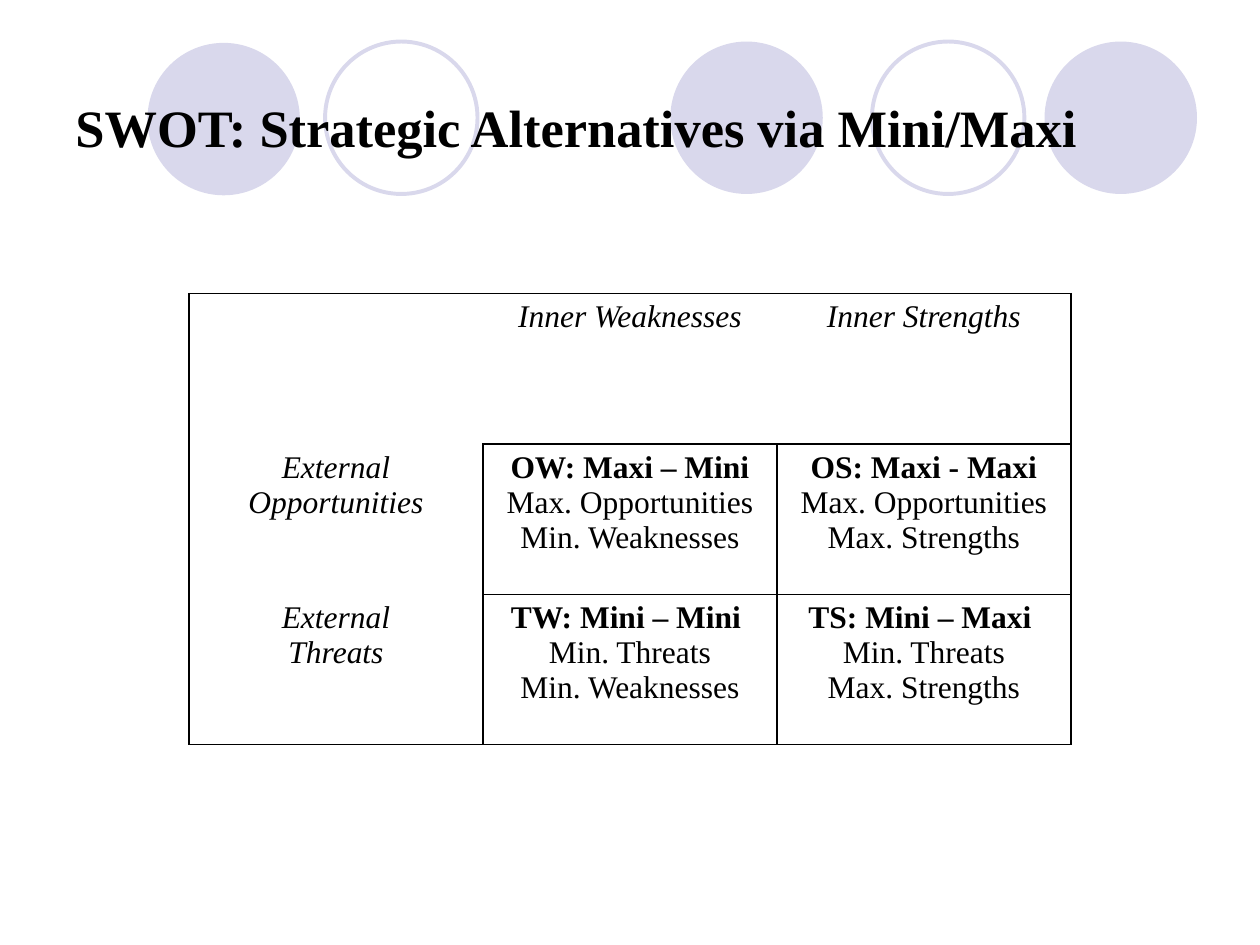
"""Build the SWOT mini/maxi strategy slide."""
from lxml import etree
from pptx import Presentation
from pptx.dml.color import RGBColor
from pptx.enum.shapes import MSO_SHAPE
from pptx.enum.text import MSO_ANCHOR, PP_ALIGN
from pptx.oxml.ns import qn
from pptx.util import Inches, Pt

OVAL = MSO_SHAPE.OVAL
MIDDLE = MSO_ANCHOR.MIDDLE
CENTER = PP_ALIGN.CENTER
BLACK = RGBColor(0, 0, 0)
LAVENDER = RGBColor(0xD9, 0xD8, 0xEC)
FONT = "Times New Roman"

TITLE = "SWOT: Strategic Alternatives via Mini/Maxi"
CIRCLES = [(5.32, 0.33, True), (8.29, 0.33, True), (1.17, 0.34, True),
           (6.92, 0.33, False), (2.58, 0.33, False)]
DIAMETER = 1.21
ROWS = [
    [[], ["Inner Weaknesses"], ["Inner Strengths"]],
    [["External Opportunities"],
     ["OW: Maxi – Mini", "Max. Opportunities", "Min. Weaknesses"],
     ["OS: Maxi - Maxi", "Max. Opportunities", "Max. Strengths"]],
    [["External", "Threats"],
     ["TW: Mini – Mini ", "Min. Threats", "Min. Weaknesses"],
     ["TS: Mini – Maxi ", "Min. Threats", "Max. Strengths"]],
]


def add_run(p, text, size, bold=False, italic=False):
    r = p.add_run()
    r.text = text
    r.font.name = FONT
    r.font.size = Pt(size)
    r.font.bold = bold
    r.font.italic = italic
    r.font.color.rgb = BLACK


def set_borders(cell, sides):
    tc_pr = cell._tc.get_or_add_tcPr()
    for i, side in enumerate("LRTB"):
        ln = etree.Element(qn(f"a:ln{side}"), w=str(Pt(1)))
        if side in sides:
            fill = etree.SubElement(ln, qn("a:solidFill"))
            etree.SubElement(fill, qn("a:srgbClr"), val=str(BLACK))
        else:
            etree.SubElement(ln, qn("a:noFill"))
        tc_pr.insert(i, ln)


def border_sides(row, col):
    if row and col:
        return "LRTB"
    edges = {"L": col == 0, "R": col == 2 or row > 0,
             "T": row == 0, "B": row == 2 or col > 0}
    return "".join(side for side, drawn in edges.items() if drawn)


def add_circle(s, left, top, filled):
    sp = s.shapes.add_shape(OVAL, Inches(left), Inches(top),
                            Inches(DIAMETER), Inches(DIAMETER))
    sp.shadow.inherit = False
    if filled:
        sp.fill.solid()
        sp.fill.fore_color.rgb = LAVENDER
        sp.line.fill.background()
    else:
        sp.fill.background()
        sp.line.color.rgb = LAVENDER
        sp.line.width = Pt(2.25)


def add_title(s):
    sp = s.shapes.add_textbox(Inches(0.5), Inches(0.67), Inches(9), Inches(0.67))
    tf = sp.text_frame
    tf.word_wrap = True
    tf.vertical_anchor = MIDDLE
    add_run(tf.paragraphs[0], TITLE, 30, bold=True)


def add_matrix(s):
    table = s.shapes.add_table(3, 3, Inches(1.5), Inches(2.33),
                               Inches(7), Inches(3.58)).table
    table.first_row = False
    table.horz_banding = False
    for row, cells in enumerate(ROWS):
        for col, lines in enumerate(cells):
            cell = table.cell(row, col)
            cell.fill.background()
            set_borders(cell, border_sides(row, col))
            strategy = row > 0 and col > 0
            tf = cell.text_frame
            for i, line in enumerate(lines):
                p = tf.add_paragraph() if i else tf.paragraphs[0]
                p.alignment = CENTER
                add_run(p, line, 18, bold=strategy and i == 0, italic=not strategy)


def main():
    prs = Presentation()
    prs.slide_width, prs.slide_height = Inches(10), Inches(7.5)
    s = prs.slides.add_slide(prs.slide_layouts[6])
    for circle in CIRCLES:
        add_circle(s, *circle)
    add_title(s)
    add_matrix(s)
    prs.save("out.pptx")


if __name__ == "__main__":
    main()
